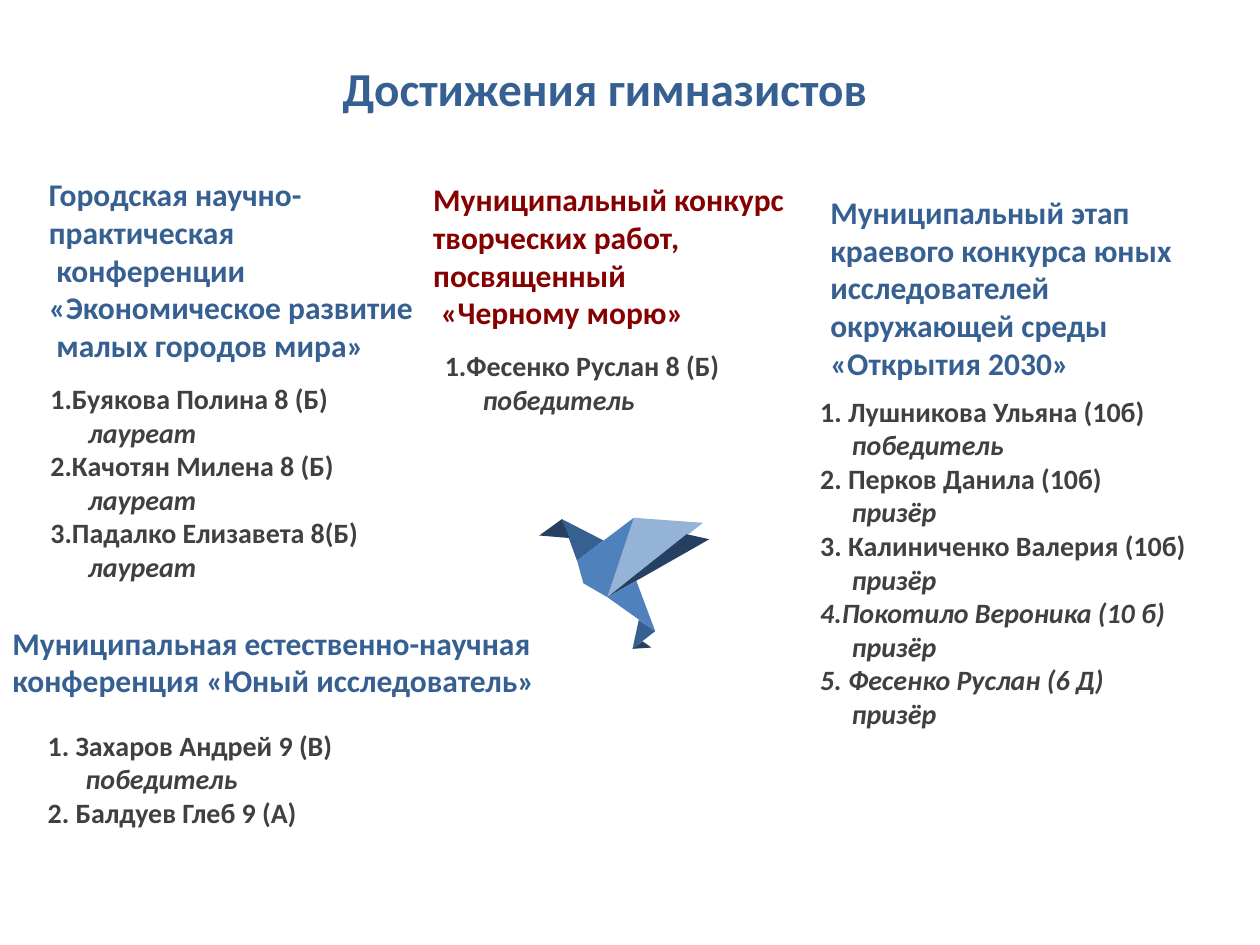
from pptx import Presentation
from pptx.dml.color import RGBColor
from pptx.enum.text import MSO_ANCHOR, MSO_AUTO_SIZE, PP_ALIGN
from pptx.util import Inches, Pt

FONT = "Calibri"
BLUE = RGBColor(0x37, 0x60, 0x92)
DARK_RED = RGBColor(0x86, 0x00, 0x00)
GREY = RGBColor(0x40, 0x40, 0x40)
NAVY = RGBColor(0x25, 0x40, 0x61)
MID_BLUE = RGBColor(0x4F, 0x81, 0xBD)
LIGHT_BLUE = RGBColor(0x95, 0xB3, 0xD7)

LAUREATE, WINNER, PRIZE = "лауреат", "победитель", "призёр"

BIRD_FACETS = [
    (LIGHT_BLUE, [(5.03, 4.11), (5.58, 4.15), (4.82, 4.74)]),
    (MID_BLUE, [(4.58, 4.45), (5.03, 4.11), (4.82, 4.74), (4.63, 4.63)]),
    (BLUE, [(4.46, 4.12), (4.79, 4.29), (4.58, 4.45)]),
    (NAVY, [(4.28, 4.25), (4.46, 4.12), (4.52, 4.27)]),
    (NAVY, [(5.63, 4.28), (5.45, 4.24), (4.82, 4.74)]),
    (MID_BLUE, [(5.2, 5.01), (5.05, 4.61), (4.82, 4.74)]),
    (BLUE, [(5.02, 5.15), (5.07, 4.92), (5.2, 5.01)]),
    (NAVY, [(5.17, 5.14), (5.1, 5.09), (5.02, 5.15)]),
]


def add_span(paragraph, text, size, color, italic=False):
    span = paragraph.add_run()
    span.text = text
    font = span.font
    font.name, font.size, font.bold, font.italic = FONT, Pt(size), True, italic
    font.color.rgb = color


def set_indent(paragraph, inches):
    paragraph._p.get_or_add_pPr().set("marL", str(Inches(inches)))


def add_title(page, text):
    title = page.shapes.title
    title.left, title.top = Inches(0.34), Inches(0.47)
    title.width, title.height = Inches(8.92), Inches(0.93)
    frame = title.text_frame
    frame.margin_left = frame.margin_right = 0
    frame.margin_top = frame.margin_bottom = 0
    frame.vertical_anchor = MSO_ANCHOR.TOP
    paragraph = frame.paragraphs[0]
    paragraph.alignment = PP_ALIGN.CENTER
    add_span(paragraph, text, 27, BLUE)


def add_frame(page, place, side_margin):
    box = page.shapes.add_textbox(*map(Inches, place))
    frame = box.text_frame
    frame.word_wrap = True
    frame.auto_size = MSO_AUTO_SIZE.SHAPE_TO_FIT_TEXT
    frame.margin_left = frame.margin_right = Inches(side_margin)
    return frame


def next_paragraph(frame, index):
    return frame.add_paragraph() if index else frame.paragraphs[0]


def add_heading(page, place, lines, color=BLUE, side_margin=0.1,
                anchor=MSO_ANCHOR.TOP):
    """Lines are (text, indent in inches) pairs."""
    frame = add_frame(page, place, side_margin)
    frame.vertical_anchor = anchor
    for index, (text, indent) in enumerate(lines):
        paragraph = next_paragraph(frame, index)
        if indent:
            set_indent(paragraph, indent)
        add_span(paragraph, text, 18, color)


def add_winners(page, place, entries, award_indent=0.3, side_margin=0,
                alignment=PP_ALIGN.JUSTIFY, italic_from=None):
    """Entries are (name, award) pairs; names from italic_from on are italic."""
    frame = add_frame(page, place, side_margin)
    for index, (name, award) in enumerate(entries):
        paragraph = next_paragraph(frame, index)
        paragraph.alignment = alignment
        italic = italic_from is not None and index >= italic_from
        add_span(paragraph, name, 16, GREY, italic)
        if award:
            paragraph = frame.add_paragraph()
            paragraph.alignment = alignment
            set_indent(paragraph, award_indent)
            add_span(paragraph, award, 16, GREY, True)


def add_bird(page):
    bird = page.shapes.add_group_shape()
    for color, corners in BIRD_FACETS:
        points = [(Inches(x), Inches(y)) for x, y in corners]
        builder = bird.shapes.build_freeform(*points[0])
        builder.add_line_segments(points[1:], close=True)
        facet = builder.convert_to_shape()
        facet.shadow.inherit = False
        facet.fill.solid()
        facet.fill.fore_color.rgb = color
        facet.line.fill.background()


def main():
    deck = Presentation()
    deck.slide_width, deck.slide_height = Inches(10), Inches(7.5)
    page = deck.slides.add_slide(deck.slide_layouts[5])
    add_title(page, "Достижения гимназистов")

    add_heading(page, (6.59, 1.46, 2.83, 1.62), [
        ("Муниципальный этап краевого конкурса юных исследователей "
         "окружающей среды «Открытия 2030»", 0),
    ], side_margin=0, anchor=MSO_ANCHOR.BOTTOM)
    add_winners(page, (6.51, 3.08, 3.04, 2.78), [
        ("1. Лушникова Ульяна (10б)", WINNER),
        ("2. Перков Данила (10б)", PRIZE),
        ("3. Калиниченко Валерия (10б)", PRIZE),
        ("4.Покотило Вероника (10 б)", PRIZE),
        ("5. Фесенко Руслан (6 Д)", PRIZE),
    ], award_indent=0.25, alignment=PP_ALIGN.LEFT, italic_from=3)

    add_bird(page)

    add_heading(page, (0.29, 1.34, 3.27, 1.62), [
        ("Городская научно-практическая", 0),
        ("конференции", 0.06),
        ("«Экономическое развитие", 0),
        ("малых городов мира»", 0.06),
    ])
    add_winners(page, (0.4, 2.98, 3.11, 1.72), [
        ("1.Буякова Полина 8 (Б)", LAUREATE),
        ("2.Качотян Милена 8 (Б)", LAUREATE),
        ("3.Падалко Елизавета 8(Б)", LAUREATE),
    ])

    add_heading(page, (3.34, 1.38, 3.27, 1.62), [
        ("Муниципальный конкурс творческих работ, посвященный", 0),
        ("«Черному морю»", 0.06),
    ], color=DARK_RED)
    add_winners(page, (3.53, 2.72, 3.11, 0.64),
                [("1.Фесенко Руслан 8 (Б)", WINNER)])

    add_heading(page, (0, 4.9, 4.5, 0.71), [
        ("Муниципальная естественно-научная конференция "
         "«Юный исследователь»", 0),
    ])
    add_winners(page, (0.28, 5.73, 5.02, 0.91), [
        ("1. Захаров Андрей 9 (В)", WINNER),
        ("2. Балдуев Глеб 9 (А)", None),
    ], side_margin=0.1)

    deck.save("out.pptx")


if __name__ == "__main__":
    main()
